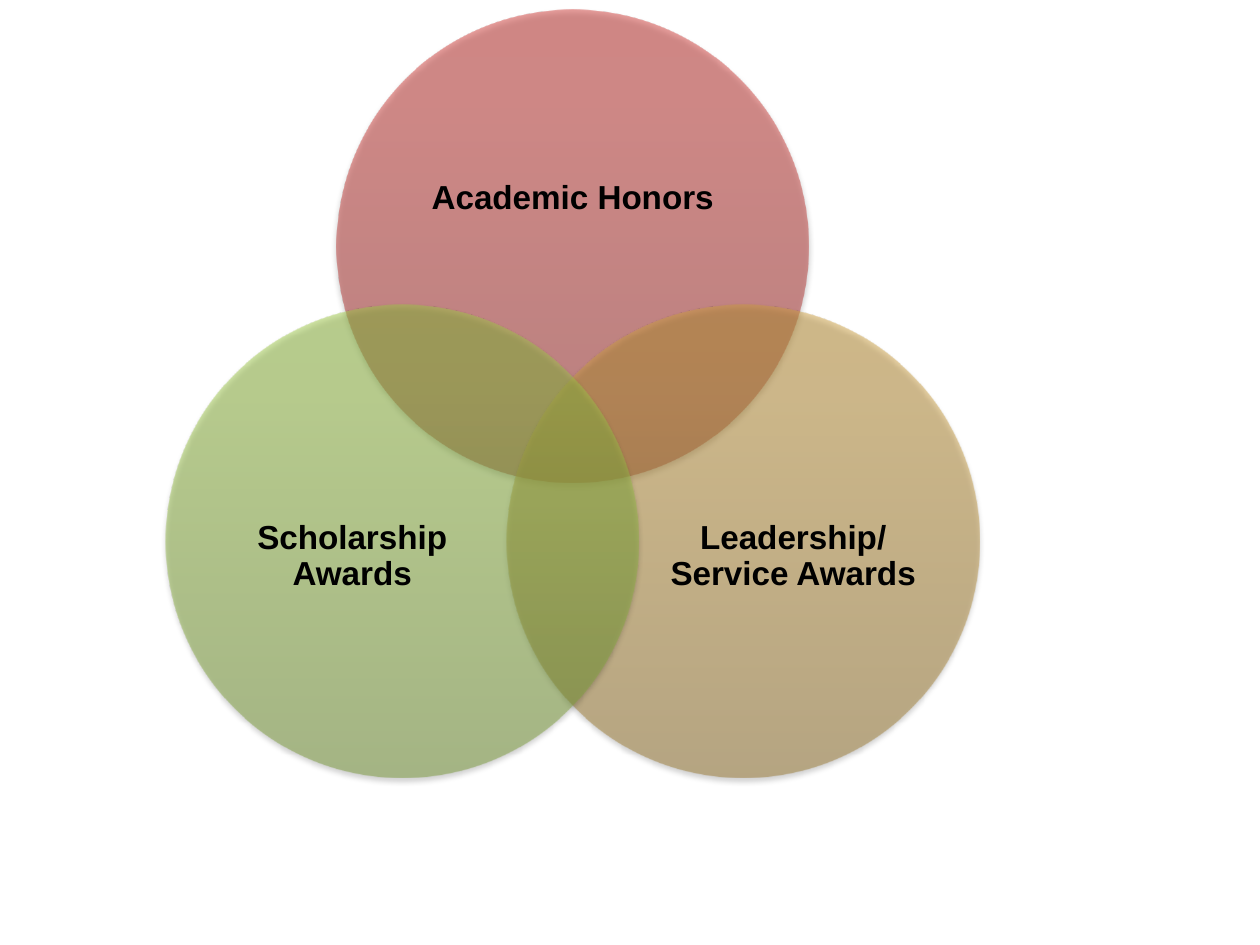
import pptx
import pptx.util
import pptx.oxml
import pptx.oxml.ns
import pptx.dml.color
import pptx.enum.shapes
import pptx.enum.text

Pt = pptx.util.Pt

COLORS = {
    "text": "000000",
    "shadow": "000000",
    "red": ("9C2F2D", "CB3E3A", "CE3B37"),
    "gold": ("997832", "C79C41", "CB9D3F"),
    "green": ("779737", "9BC348", "9DC746"),
}
# label, colour, circle offset from the top circle, label box (left, top, width, height)
AWARDS = [
    ("Academic Honors", "red", (0, 0), (228.24, 52.56, 198, 121.68)),
    ("Leadership/Service Awards", "gold", (97.5, 168.5), (372.24, 244.08, 162, 148.32)),
    ("Scholarship Awards", "green", (-97.5, 168.5), (120.24, 244.08, 162, 148.32)),
]
DIAMETER = 270
TOP_CIRCLE = (192.1, 5.76)
STOPS = (0, 80, 100)
OPACITY = 50
NS = pptx.oxml.ns.nsdecls("a")

FRAME_FORMAT = {
    "word_wrap": True,
    "vertical_anchor": pptx.enum.text.MSO_ANCHOR.MIDDLE,
    "margin_left": 0, "margin_top": 0, "margin_right": 0, "margin_bottom": 0,
}
PARAGRAPH_FORMAT = {
    "alignment": pptx.enum.text.PP_ALIGN.CENTER,
    "line_spacing": 0.9,
    "space_after": Pt(6.65),
}
FONT_FORMAT = {"name": "Arial", "size": Pt(19), "bold": True}


def apply_format(target, values):
    for key, value in values.items():
        setattr(target, key, value)


def gradient_xml(shades):
    """Translucent gradient running from the bottom up."""
    stops = "".join(
        f'<a:gs pos="{stop * 1000}"><a:srgbClr val="{shade}">'
        f'<a:alpha val="{OPACITY * 1000}"/></a:srgbClr></a:gs>'
        for stop, shade in zip(STOPS, shades))
    return (f'<a:gradFill {NS} rotWithShape="1"><a:gsLst>{stops}</a:gsLst>'
            '<a:lin ang="16200000" scaled="0"/></a:gradFill>')


def shadow_xml():
    return (f'<a:outerShdw {NS} blurRad="{Pt(3.15)}" dist="{Pt(1.8)}" dir="5400000" '
            f'rotWithShape="0"><a:srgbClr val="{COLORS["shadow"]}">'
            '<a:alpha val="35000"/></a:srgbClr></a:outerShdw>')


def add_circle(slide, offset, shades):
    left, top = (start + shift for start, shift in zip(TOP_CIRCLE, offset))
    circle = slide.shapes.add_shape(
        pptx.enum.shapes.MSO_SHAPE.OVAL, Pt(left), Pt(top), Pt(DIAMETER), Pt(DIAMETER))
    circle.line.fill.background()
    circle.shadow.inherit = False
    properties = circle.element.spPr
    geometry = properties.find(pptx.oxml.ns.qn("a:prstGeom"))
    geometry.addnext(pptx.oxml.parse_xml(gradient_xml(shades)))
    effects = properties.find(pptx.oxml.ns.qn("a:effectLst"))
    effects.append(pptx.oxml.parse_xml(shadow_xml()))


def add_label(slide, label, box):
    frame = slide.shapes.add_textbox(*map(Pt, box)).text_frame
    apply_format(frame, FRAME_FORMAT)
    paragraph = frame.paragraphs[0]
    apply_format(paragraph, PARAGRAPH_FORMAT)
    run = paragraph.add_run()
    run.text = label
    apply_format(run.font, FONT_FORMAT)
    run.font.color.rgb = pptx.dml.color.RGBColor.from_string(COLORS["text"])


def main():
    deck = pptx.Presentation()
    deck.slide_width, deck.slide_height = Pt(720), Pt(540)
    slide = deck.slides.add_slide(deck.slide_layouts[6])
    for label, color, offset, box in AWARDS:
        add_circle(slide, offset, COLORS[color])
        add_label(slide, label, box)
    deck.save("out.pptx")


if __name__ == "__main__":
    main()
